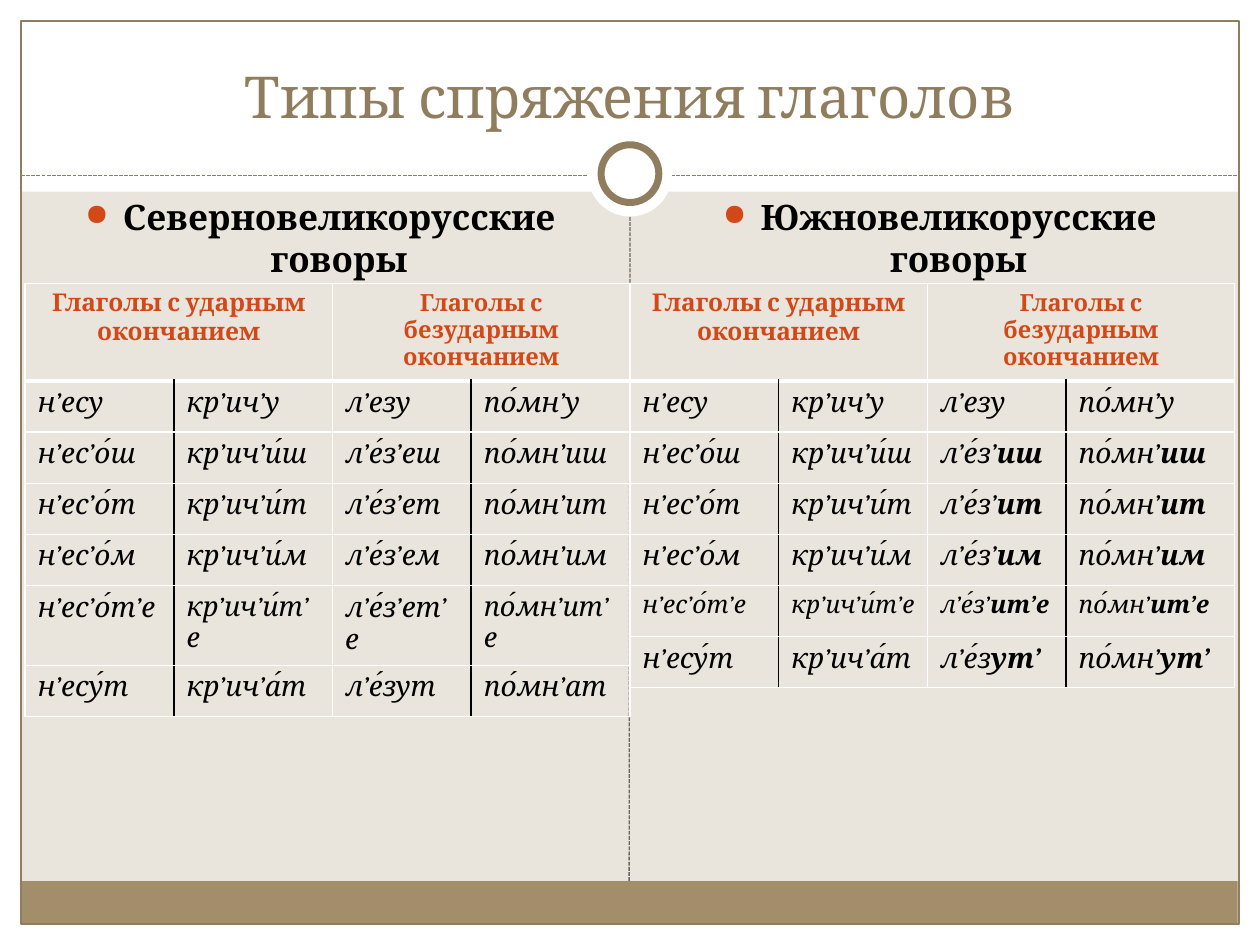
from dataclasses import dataclass
from pptx import Presentation
from pptx.dml.color import RGBColor as Color
from pptx.enum.dml import MSO_LINE_DASH_STYLE as Dash
from pptx.enum.shapes import MSO_CONNECTOR as Connector, MSO_SHAPE as Shape
from pptx.enum.text import MSO_ANCHOR as Anchor, PP_ALIGN as Align
from pptx.oxml.xmlchemy import OxmlElement as Element
from pptx.util import Pt


@dataclass(frozen=True)
class Theme:
    paper: str = "E9E5DC"
    white: str = "FFFFFF"
    band: str = "A28E6A"
    brown: str = "8F7D5E"
    gray: str = "696464"
    accent: str = "D34817"
    black: str = "000000"
    font: str = "Cambria"
    stress_font: str = "Times New Roman"
    title: float = 33
    heading: float = 20
    word: float = 16


theme = Theme()
STRESS = "́"


def add_panel(kind, left, top, width, height, fill=None, line=None, weight=0.75):
    shape = slide.shapes.add_shape(kind, Pt(left), Pt(top), Pt(width), Pt(height))
    shape.shadow.inherit = False
    if fill:
        shape.fill.solid()
        shape.fill.fore_color.rgb = Color.from_string(fill)
    else:
        shape.fill.background()
    if line:
        shape.line.color.rgb = Color.from_string(line)
        shape.line.width = Pt(weight)
    else:
        shape.line.fill.background()
    return shape


def style_run(run, size, color, bold=False, italic=False, name=theme.font):
    run.font.name = name
    run.font.size = Pt(size)
    run.font.bold = bold
    run.font.italic = italic
    run.font.color.rgb = Color.from_string(color)


presentation = Presentation()
presentation.slide_width, presentation.slide_height = Pt(720), Pt(540)
slide = presentation.slides.add_slide(presentation.slide_layouts[6])
slide.background.fill.solid()
slide.background.fill.fore_color.rgb = Color.from_string(theme.paper)

# White margins, bottom band and frame
for box in ((0, 528, 720, 12), (0, 0, 720, 109.5), (0, 0, 12, 540), (708, 0, 12, 540)):
    add_panel(Shape.RECTANGLE, *box, fill=theme.white)
band = add_panel(Shape.RECTANGLE, 11.75, 503.5, 695.5, 24.5, fill=theme.band)
add_panel(Shape.RECTANGLE, 12, 12, 696, 516, line=theme.brown)

# Dashed dividers, with the ring over the horizontal one
header_rule = slide.shapes.add_connector(Connector.STRAIGHT, Pt(12), Pt(100.5), Pt(708), Pt(100.5))
add_panel(Shape.OVAL, 336, 75.75, 48, 48, fill=theme.white)
add_panel(Shape.OVAL, 343.5, 82.75, 33, 33, fill=theme.white, line=theme.brown, weight=4)
column_rule = slide.shapes.add_connector(Connector.STRAIGHT, Pt(359.5), Pt(503.5), Pt(360), Pt(123.75))
column_rule.begin_connect(band, 0)
for rule, color in ((header_rule, theme.brown), (column_rule, theme.gray)):
    rule.line.color.rgb = Color.from_string(color)
    rule.line.width = Pt(0.75)
    rule.line.dash_style = Dash.SQUARE_DOT
    rule._element.spPr.append(Element("a:effectLst"))

# Title and the two headings
texts = (
    ("Типы спряжения глаголов", (24, 18, 672, 60), theme.title, theme.brown),
    ("Северновеликорусские говоры", (24, 108, 318, 369), theme.heading, theme.black),
    ("Южновеликорусские говоры", (378, 108, 318, 369), theme.heading, theme.black),
)
for text, box, size, color in texts:
    is_title = size == theme.title
    frame = slide.shapes.add_textbox(*map(Pt, box)).text_frame
    frame.word_wrap = True
    frame.vertical_anchor = Anchor.BOTTOM if is_title else Anchor.TOP
    paragraph = frame.paragraphs[0]
    paragraph.text = text
    paragraph.alignment = Align.CENTER
    if not is_title:
        properties = paragraph._p.get_or_add_pPr()
        properties.set("marL", str(Pt(21.6)))
        properties.set("indent", str(Pt(-21.6)))
        bullet_color = Element("a:buClr")
        rgb = Element("a:srgbClr")
        rgb.set("val", theme.accent)
        bullet_color.append(rgb)
        bullet_size = Element("a:buSzPct")
        bullet_size.set("val", "85000")
        bullet = Element("a:buChar")
        bullet.set("char", "●")
        properties.extend((bullet_color, bullet_size, bullet))
    style_run(paragraph.runs[0], size, color, bold=not is_title)

# Conjugation tables: a bar starts the bold ending of a word
headers = (("Глаголы с ударным окончанием", 14), ("Глаголы с безударным окончанием", 13.5))
northern = (
    ("н’есу", "кр’ич’у", "л’езу", "по́мн’у"),
    ("н’ес’о́ш", "кр’ич’и́ш", "л’е́з’еш", "по́мн’иш"),
    ("н’ес’о́т", "кр’ич’и́т", "л’е́з’ет", "по́мн’ит"),
    ("н’ес’о́м", "кр’ич’и́м", "л’е́з’ем", "по́мн’им"),
    ("н’ес’о́т’е", "кр’ич’и́т’е", "л’е́з’ет’е", "по́мн’ит’е"),
    ("н’есу́т", "кр’ич’а́т", "л’е́зут", "по́мн’ат"),
)
southern_endings = (
    ("л’езу", "по́мн’у"),
    ("л’е́з’|иш", "по́мн’|иш"),
    ("л’е́з’|ит", "по́мн’|ит"),
    ("л’е́з’|им", "по́мн’|им"),
    ("л’е́з’|ит’е", "по́мн’|ит’е"),
    ("л’е́з|ут’", "по́мн’|ут’"),
)
# Stressed endings are the same in both dialects
southern = [row[:2] + endings for row, endings in zip(northern, southern_endings)]
tables = (
    (14.4, (85, 90.7, 79.2, 90.7), northern, (16, 15.5, 16, 15.5)),
    (360, (85, 85, 79.2, 96.4), southern, (14, 14, 14, 14)),
)
LONG_ROW = 5
for left, widths, words, long_sizes in tables:
    table = slide.shapes.add_table(7, 4, Pt(left), Pt(162), Pt(sum(widths)), Pt(204.4)).table
    table.first_row = table.horz_banding = False
    for column, width in zip(table.columns, widths):
        column.width = Pt(width)
    for row in table.rows:
        row.height = Pt(29.2)

    # Header cells span two columns each
    for index, (text, size) in enumerate(headers):
        cell = table.cell(0, 2 * index)
        cell.merge(table.cell(0, 2 * index + 1))
        paragraph = cell.text_frame.paragraphs[0]
        paragraph.text = text
        paragraph.alignment = Align.CENTER
        style_run(paragraph.runs[0], size, theme.accent, bold=True)

    # Verb forms, with the stress mark in its own font
    for row_index, row_words in enumerate(words, 1):
        for column_index, word in enumerate(row_words):
            size = long_sizes[column_index] if row_index == LONG_ROW else theme.word
            paragraph = table.cell(row_index, column_index).text_frame.paragraphs[0]
            stem, _, ending = word.partition("|")
            for part in (*stem.partition(STRESS), ending):
                if part:
                    run = paragraph.add_run()
                    run.text = part
                    name = theme.stress_font if part == STRESS else theme.font
                    style_run(run, size, theme.black, part is ending, True, name)

    # Borders: black inside each column pair, thick white under the header
    for row_index in range(7):
        for column_index in range(4):
            cell = table.cell(row_index, column_index)
            inner = "a:lnL" if column_index % 2 else "a:lnR"
            heavy = {0: "a:lnB", 1: "a:lnT"}.get(row_index)
            for side in ("a:lnL", "a:lnR", "a:lnT", "a:lnB"):
                border = Element(side)
                border.set("w", str(Pt(3 if side == heavy else 1)))
                fill = Element("a:solidFill")
                rgb = Element("a:srgbClr")
                rgb.set("val", theme.black if row_index and side == inner else theme.white)
                fill.append(rgb)
                border.append(fill)
                cell._tc.get_or_add_tcPr().append(border)
            cell.fill.background()

presentation.save("out.pptx")
